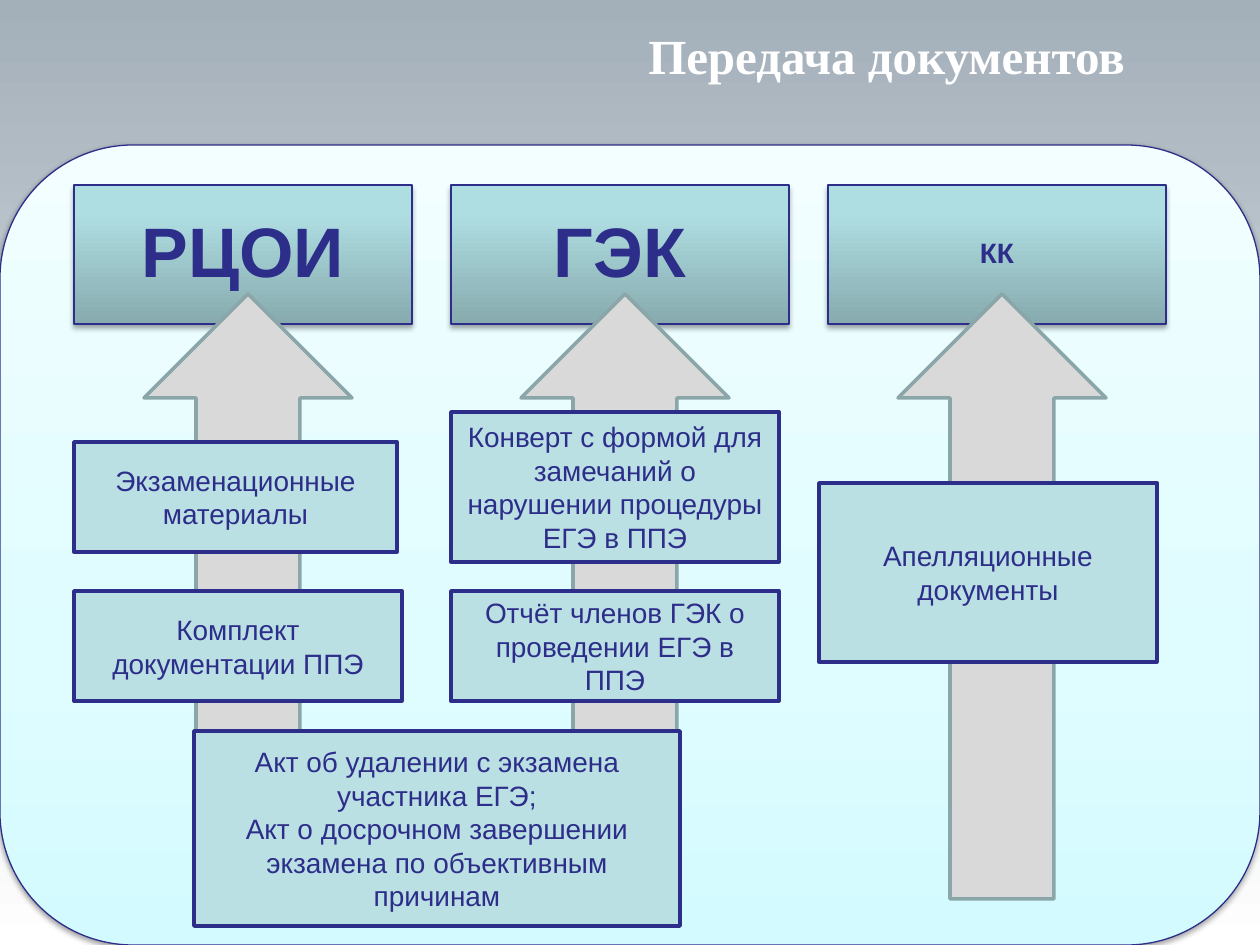
from copy import deepcopy
from dataclasses import dataclass

from lxml.etree import SubElement
from pptx import Presentation
from pptx.dml.color import RGBColor
from pptx.dml.fill import FillFormat
from pptx.enum.shapes import MSO_SHAPE as Shape
from pptx.enum.text import MSO_ANCHOR as Anchor, PP_ALIGN as Align
from pptx.oxml.ns import qn
from pptx.shapes.autoshape import Shape as AutoShape
from pptx.text.text import TextFrame
from pptx.util import Emu, Pt

PX = 914400 / 126
COLORS = {
    "ink": "2D2D8A", "title": "FFFFFF", "card": "BBE0E3",
    "arrow": "D9D9D9", "arrow_edge": "8AA6A8", "shadow": "000000",
}
# Gradients run from bottom to top: (position in percent, colour)
BACKDROP = [(0, "FFFFFF"), (100, "A3AFB9")]
PANEL = [(0, "D3FBFF"), (35, "DFFCFF"), (100, "F2FEFF")]
HEADER = [(0, "87ABAE"), (80, "AFDEE2"), (100, "AFE0E4")]

COLUMN_LEFT, COLUMN_PITCH = 74, 377
HEADER_TOP, HEADER_WIDTH, HEADER_HEIGHT = 185, 338, 139
ARROW_TOP, ARROW_WIDTH, ARROW_INSET = 294, 208, 70


@dataclass
class Box:
    left: int
    top: int
    width: int
    height: int

    def emu(self) -> list[Emu]:
        return [px(n) for n in (self.left, self.top, self.width, self.height)]


@dataclass
class Recipient:
    name: str
    size: int
    arrow_height: int


@dataclass
class Document:
    text: str
    box: Box


RECIPIENTS = [
    Recipient("РЦОИ", 40, 605),
    Recipient("ГЭК", 40, 595),
    Recipient("КК", 16, 605),
]
DOCUMENTS = [
    Document("Экзаменационные материалы", Box(74, 442, 323, 110)),
    Document("Комплект документации ППЭ", Box(74, 591, 328, 110)),
    Document("Конверт с формой для замечаний о нарушении процедуры ЕГЭ в ППЭ",
             Box(451, 412, 328, 150)),
    Document("Апелляционные документы", Box(819, 483, 338, 179)),
    Document("Акт об удалении с экзамена участника ЕГЭ;\n"
             "Акт о досрочном завершении экзамена по объективным причинам",
             Box(194, 731, 486, 195)),
    Document("Отчёт членов ГЭК о проведении ЕГЭ в ППЭ", Box(451, 591, 328, 110)),
]


def px(n: int) -> Emu:
    return Emu(round(n * PX))


def rgb(name: str) -> RGBColor:
    return RGBColor.from_string(COLORS[name])


def set_gradient(fill: FillFormat, owner, stops: list[tuple[int, str]]) -> None:
    fill.gradient()
    fill.gradient_angle = 90
    stop_list = next(owner.iter(qn("a:gsLst")))
    while len(stop_list) < len(stops):
        stop_list.append(deepcopy(stop_list[-1]))
    for stop, (position, color) in zip(fill.gradient_stops, stops):
        stop.position = position / 100
        stop.color.rgb = RGBColor.from_string(color)


def add_shadow(shape: AutoShape, opacity: int, distance: float) -> None:
    effects = shape._element.spPr.find(qn("a:effectLst"))
    shadow = SubElement(effects, qn("a:outerShdw"), blurRad=str(Pt(3.1)),
                        dist=str(Pt(distance)), dir="5400000", rotWithShape="0")
    color = SubElement(shadow, qn("a:srgbClr"), val=COLORS["shadow"])
    SubElement(color, qn("a:alpha"), val=str(opacity * 1000))


def add_outlined(slide, kind: Shape, box: Box, edge: str, weight: float) -> AutoShape:
    shape = slide.shapes.add_shape(kind, *box.emu())
    shape.shadow.inherit = False
    shape.line.color.rgb = rgb(edge)
    shape.line.width = Pt(weight)
    return shape


def write(frame: TextFrame, text: str, size: int, color: str = "ink",
          font: str = "Arial", bold: bool = False, anchor: Anchor = Anchor.MIDDLE) -> None:
    frame.word_wrap = True
    frame.vertical_anchor = anchor
    frame.text = text
    for paragraph in frame.paragraphs:
        paragraph.alignment = Align.CENTER
        for run in paragraph.runs:
            run.font.name = font
            run.font.size = Pt(size)
            run.font.bold = bold
            run.font.color.rgb = rgb(color)


def add_header(slide, recipient: Recipient, left: int) -> None:
    box = Box(left, HEADER_TOP, HEADER_WIDTH, HEADER_HEIGHT)
    header = add_outlined(slide, Shape.RECTANGLE, box, "ink", 0.75)
    set_gradient(header.fill, header._element, HEADER)
    add_shadow(header, 35, 1.8)
    write(header.text_frame, recipient.name, recipient.size, bold=True)
    header.text_frame.paragraphs[0].line_spacing = 0.9


def add_arrow(slide, recipient: Recipient, left: int) -> None:
    box = Box(left + ARROW_INSET, ARROW_TOP, ARROW_WIDTH, recipient.arrow_height)
    arrow = add_outlined(slide, Shape.UP_ARROW, box, "arrow_edge", 2)
    arrow.fill.solid()
    arrow.fill.fore_color.rgb = rgb("arrow")


def add_document(slide, document: Document) -> None:
    card = add_outlined(slide, Shape.RECTANGLE, document.box, "ink", 2)
    card.fill.solid()
    card.fill.fore_color.rgb = rgb("card")
    write(card.text_frame, document.text, 16)


def main() -> None:
    deck = Presentation()
    deck.slide_width, deck.slide_height = px(1260), px(945)
    slide = deck.slides.add_slide(deck.slide_layouts[6])
    set_gradient(slide.background.fill, slide._element, BACKDROP)

    # Panel and title
    panel = add_outlined(slide, Shape.ROUNDED_RECTANGLE, Box(0, 145, 1260, 800), "ink", 0.75)
    set_gradient(panel.fill, panel._element, PANEL)
    add_shadow(panel, 38, 1.6)
    title = slide.shapes.add_textbox(*Box(543, 19, 687, 125).emu())
    write(title.text_frame, "Передача документов", 28, "title",
          "Times New Roman", bold=True, anchor=Anchor.TOP)

    # Recipients, each with an arrow pointing up to it
    for column, recipient in enumerate(RECIPIENTS):
        left = COLUMN_LEFT + column * COLUMN_PITCH
        add_header(slide, recipient, left)
        add_arrow(slide, recipient, left)

    # Documents handed over
    for document in DOCUMENTS:
        add_document(slide, document)

    deck.save("out.pptx")


if __name__ == "__main__":
    main()
